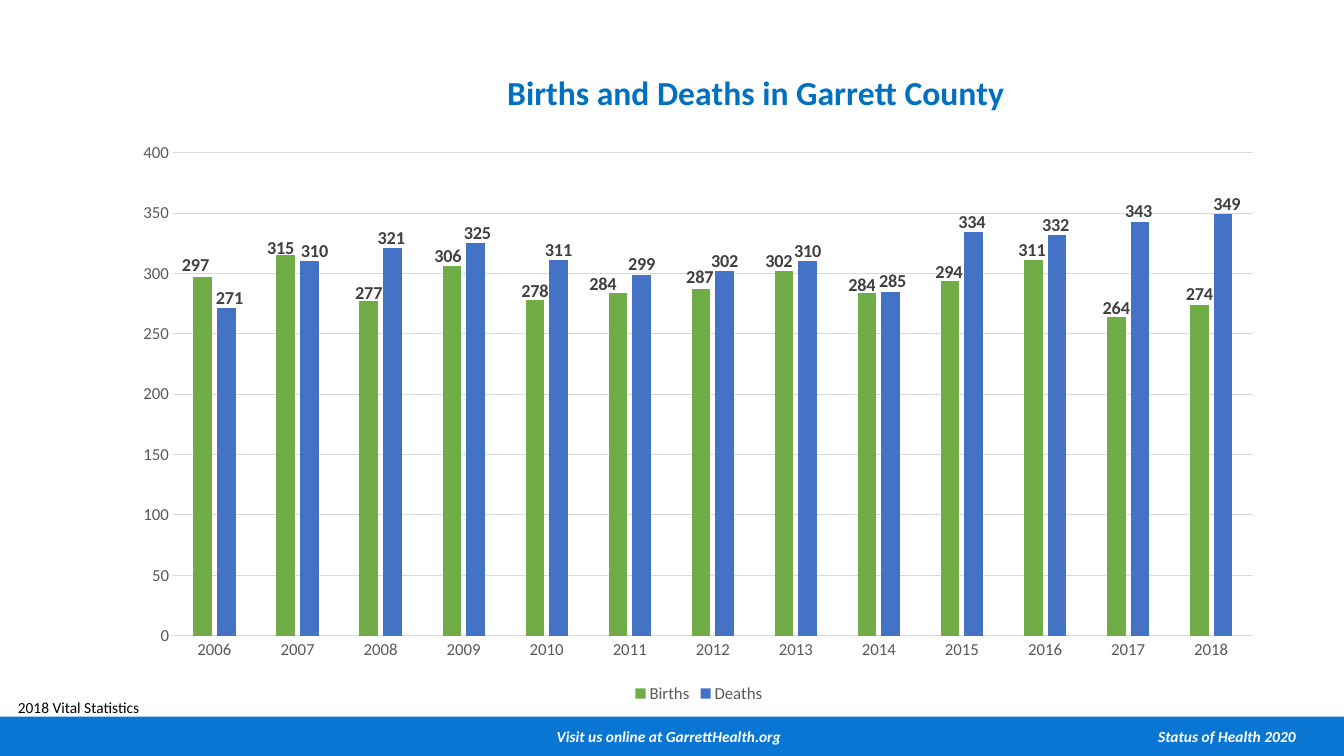
import pptx
import pptx.chart.data
import pptx.dml.color
import pptx.enum.chart
import pptx.enum.shapes
import pptx.enum.text
import pptx.oxml
import pptx.oxml.ns
import pptx.util
from pptx.util import Cm

FONT = "Calibri"
NS_C = pptx.oxml.ns.nsdecls("c")
NS_A = pptx.oxml.ns.nsdecls("a")
CHART_W, CHART_H = 29.13, 16.31  # cm
rgb = pptx.dml.color.RGBColor.from_string


def style(font, size, color, bold=False, italic=False):
    font.name, font.size = FONT, pptx.util.Pt(size)
    font.bold, font.italic = bold, italic
    font.color.rgb = rgb(color)


def add_text(p, text, **fmt):
    r = p.add_run()
    r.text = text
    style(r.font, **fmt)


prs = pptx.Presentation()
prs.slide_width, prs.slide_height = Cm(33.87), Cm(19.05)
s = prs.slides.add_slide(prs.slide_layouts[6])

# Footer bar: centred and right-hand text on tab stops
bar = s.shapes.add_shape(pptx.enum.shapes.MSO_SHAPE.RECTANGLE,
                         0, Cm(18.06), prs.slide_width, Cm(0.99))
bar.shadow.inherit = False
bar.fill.solid()
bar.fill.fore_color.rgb = rgb("0A76D3")
bar.line.fill.background()
tf = bar.text_frame
tf.margin_left = tf.margin_right = 0
tf.vertical_anchor = pptx.enum.text.MSO_ANCHOR.MIDDLE
p = tf.paragraphs[0]
p.alignment = pptx.enum.text.PP_ALIGN.LEFT
p._p.get_or_add_pPr().append(pptx.oxml.parse_xml(
    f'<a:tabLst {NS_A}><a:tab pos="{Cm(16.86)}" algn="ctr"/>'
    f'<a:tab pos="{Cm(32.66)}" algn="r"/></a:tabLst>'))
add_text(p, "\tVisit us online at GarrettHealth.org\tStatus of Health 2020",
         size=11, color="FFFFFF", bold=True, italic=True)

# Chart data
data = pptx.chart.data.CategoryChartData()
data.categories = [str(year) for year in range(2006, 2019)]
data.add_series("Births", [297, 315, 277, 306, 278, 284, 287,
                           302, 284, 294, 311, 264, 274])
data.add_series("Deaths", [271, 310, 321, 325, 311, 299, 302,
                           310, 285, 334, 332, 343, 349])
chart = s.shapes.add_chart(
    pptx.enum.chart.XL_CHART_TYPE.COLUMN_CLUSTERED,
    Cm(3.05), Cm(1.52), Cm(CHART_W), Cm(CHART_H), data).chart
style(chart.font, 10, "000000")

# Title and legend
chart.has_title = True
add_text(chart.chart_title.text_frame.paragraphs[0],
         "Births and Deaths in Garrett County",
         size=24, color="0070C0", bold=True)
chart.has_legend = True
chart.legend.position = pptx.enum.chart.XL_LEGEND_POSITION.BOTTOM
chart.legend.include_in_layout = False
style(chart.legend.font, 12, "595959")

# Axes and gridlines
val_axis, cat_axis = chart.value_axis, chart.category_axis
for axis in (val_axis, cat_axis):
    axis.major_tick_mark = pptx.enum.chart.XL_TICK_MARK.NONE
    axis.minor_tick_mark = pptx.enum.chart.XL_TICK_MARK.NONE
    style(axis.tick_labels.font, 12, "595959")
val_axis.minimum_scale, val_axis.maximum_scale = 0, 400
val_axis.major_unit = 50
val_axis.format.line.fill.background()
for line in (cat_axis.format.line, val_axis.major_gridlines.format.line):
    line.color.rgb = rgb("D9D9D9")
    line.width = pptx.util.Pt(0.75)

# Title and plot area boxes, in cm within the chart
placements = [
    (chart.chart_title._element, "", "edge", {"x": 9.58, "y": 0.1}),
    (chart._chartSpace.chart.plotArea, '<c:layoutTarget val="inner"/>',
     "edge", {"x": 1.31, "y": 2.33, "w": 27.21, "h": 12.17})]

# Columns and value labels, each label shifted (cm) clear of its neighbour
plot = chart.plots[0]
plot.vary_by_categories = False
plot.gap_width, plot.overlap = 219, -27
births_dx = [-.18, -.13, 0, -.1, 0, -.38, -.03, -.13, -.13, -.03, -.03, 0, 0]
births_dy = [.1, .2, .2, .13, .18, .18, .1, .15, .2, .18, .15, .18, .13]
deaths_dx = [.08, .13, -.03, .05, 0, 0, 0, 0, .05, -.05, -.03, -.03, .1]
deaths_dy = [.14] * 13
for series, color, shifts in zip(
        plot.series, ("70AD47", "4472C4"),
        (zip(births_dx, births_dy), zip(deaths_dx, deaths_dy))):
    series.format.fill.solid()
    series.format.fill.fore_color.rgb = rgb(color)
    series.data_labels.show_value = True
    for i, (dx, dy) in enumerate(shifts):
        label = series.points[i].data_label
        style(label.font, 13, "404040", bold=True)
        label.position = pptx.enum.chart.XL_LABEL_POSITION.OUTSIDE_END
        placements.append((label._get_or_add_dLbl(), "", "factor",
                           {"x": dx, "y": dy}))

# Write the placements as fractions of the chart
extent = {"x": CHART_W, "y": CHART_H, "w": CHART_W, "h": CHART_H}
for parent, target, mode, box in placements:
    for old in parent.findall(pptx.oxml.ns.qn("c:layout")):
        parent.remove(old)
    modes = "".join(f'<c:{k}Mode val="{mode}"/>' for k in "xy")
    sizes = "".join(f'<c:{k} val="{v / extent[k]:.5f}"/>'
                    for k, v in box.items())
    parent.insert(0 if target else 1, pptx.oxml.parse_xml(
        f"<c:layout {NS_C}><c:manualLayout>{target}{modes}{sizes}"
        "</c:manualLayout></c:layout>"))

# Source note
tf = s.shapes.add_textbox(Cm(0.2), Cm(17.46), Cm(4.72), Cm(0.74)).text_frame
tf.word_wrap = True
add_text(tf.paragraphs[0], "2018 Vital Statistics", size=11, color="000000")

prs.save("out.pptx")
